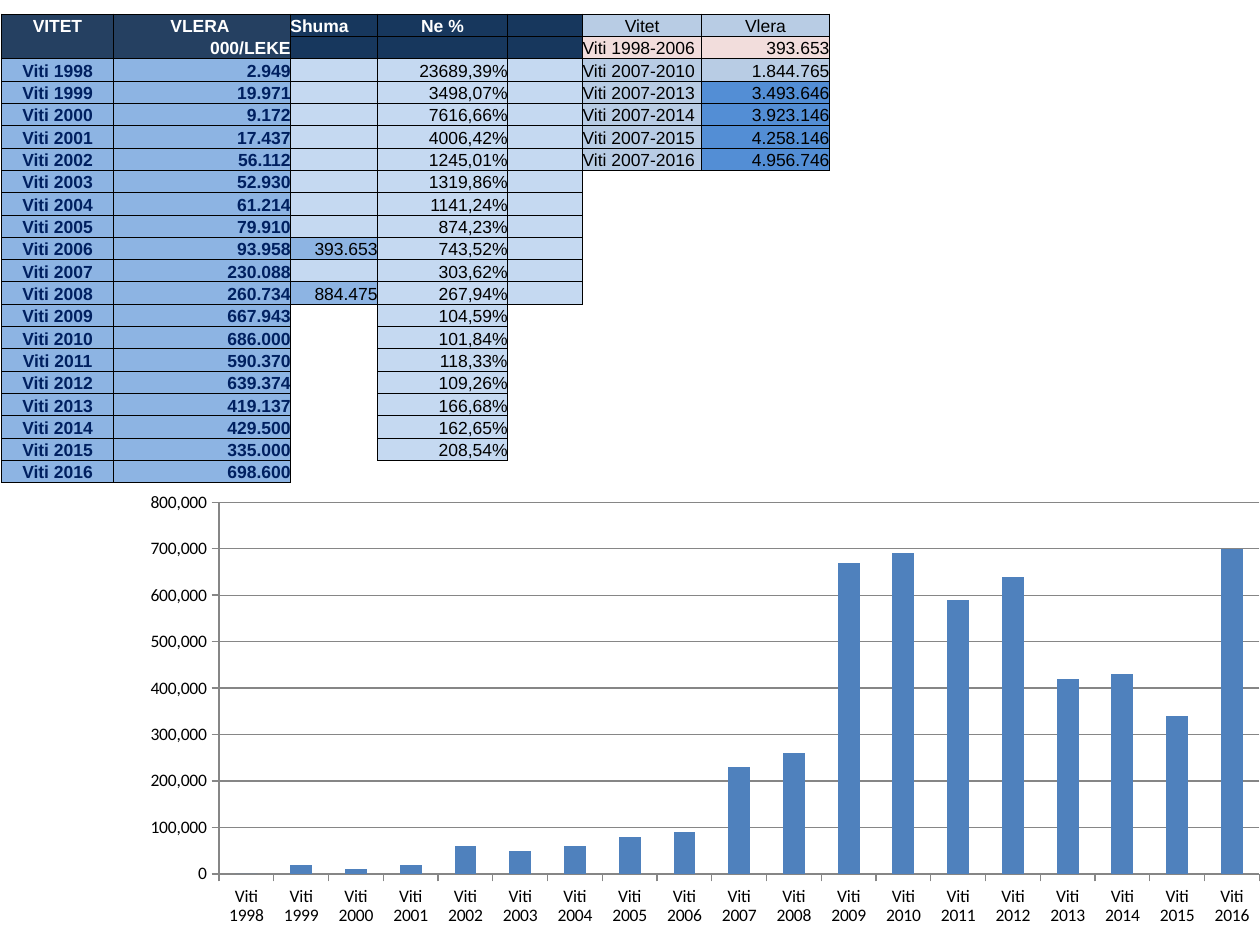
from lxml import etree
from pptx import Presentation
from pptx.chart.data import CategoryChartData
from pptx.dml.color import RGBColor
from pptx.enum import chart as ch, text
from pptx.oxml.ns import qn
from pptx.util import Pt

COLORS = {
    "title": "254061", "subtitle": "17375D", "year": "8DB4E3", "light": "C5D9F1",
    "period": "B8CCE4", "pink": "F2DDDC", "strong": "538ED5", "navy": "002060",
    "white": "FFFFFF", "black": "000000", "bar": "4F81BD", "axis": "868686",
}

# Content: year, value, share in percent
YEARS = [
    (1998, 2949, "23689,39%"), (1999, 19971, "3498,07%"), (2000, 9172, "7616,66%"),
    (2001, 17437, "4006,42%"), (2002, 56112, "1245,01%"), (2003, 52930, "1319,86%"),
    (2004, 61214, "1141,24%"), (2005, 79910, "874,23%"), (2006, 93958, "743,52%"),
    (2007, 230088, "303,62%"), (2008, 260734, "267,94%"), (2009, 667943, "104,59%"),
    (2010, 686000, "101,84%"), (2011, 590370, "118,33%"), (2012, 639374, "109,26%"),
    (2013, 419137, "166,68%"), (2014, 429500, "162,65%"), (2015, 335000, "208,54%"),
    (2016, 698600, None),
]
SUMS = {2006: "393.653", 2008: "884.475"}
LAST_SUM_YEAR = 2008
HEADERS = [
    ["VITET", "VLERA ", "Shuma", "Ne %", "", "Vitet", "Vlera"],
    ["", "000/LEKE", "", "", "", "Viti 1998-2006", "393.653"],
]
PERIODS = [
    ("Viti 2007-2010", "1.844.765", "period"), ("Viti 2007-2013", "3.493.646", "strong"),
    ("Viti 2007-2014", "3.923.146", "strong"), ("Viti 2007-2015", "4.258.146", "strong"),
    ("Viti 2007-2016", "4.956.746", "strong"),
]
COL_WIDTHS = [64.25, 101, 49.75, 74.25, 43, 68, 73]
ROW_HEIGHT = 12.77
LEFT, CENTER, RIGHT = text.PP_ALIGN.LEFT, text.PP_ALIGN.CENTER, text.PP_ALIGN.RIGHT
ALIGN = [CENTER, RIGHT, RIGHT, RIGHT, LEFT, LEFT, RIGHT]
HEAD_ALIGN = [CENTER, CENTER, LEFT, CENTER, LEFT, CENTER, CENTER]


def rgb(name):
    return RGBColor.from_string(COLORS[name])


def build_grid():
    """Rows of (text, fill name or None)."""
    head_fills = ["title"] * 2 + ["subtitle"] * 3
    grid = [list(zip(HEADERS[0], head_fills + ["period"] * 2)),
            list(zip(HEADERS[1], head_fills + ["pink"] * 2))]
    for i, (year, value, share) in enumerate(YEARS):
        light = "light" if year <= LAST_SUM_YEAR else None
        row = [(f"Viti {year}", "year"), (f"{value:,}".replace(",", "."), "year"),
               (SUMS.get(year, ""), "year" if year in SUMS else light),
               (share or "", "light" if share else None), ("", light)]
        if i < len(PERIODS):
            period, total, fill = PERIODS[i]
            row += [(period, "period"), (total, fill)]
        else:
            row += [("", None)] * 2
        grid.append(row)
    return grid


def has_edge(grid, r, c, dr, dc):
    """An edge shows beside any filled cell, but not inside the two-row headings."""
    r2, c2 = r + dr, c + dc
    if c < 2 and dr and {r, r2} == {0, 1}:
        return False
    inside = 0 <= r2 < len(grid) and 0 <= c2 < len(grid[0])
    return bool(grid[r][c][1] or (inside and grid[r2][c2][1]))


def set_borders(cell, grid, r, c):
    sides = [("lnL", 0, -1), ("lnR", 0, 1), ("lnT", -1, 0), ("lnB", 1, 0)]
    tc_pr = cell._tc.get_or_add_tcPr()
    for i, (tag, dr, dc) in enumerate(sides):
        ln = etree.Element(qn(f"a:{tag}"), w=str(Pt(0.5)))
        if has_edge(grid, r, c, dr, dc):
            fill = etree.SubElement(ln, qn("a:solidFill"))
            etree.SubElement(fill, qn("a:srgbClr"), val=COLORS["black"])
        else:
            etree.SubElement(ln, qn("a:noFill"))
        tc_pr.insert(i, ln)


def format_cell(cell, value, fill, r, c):
    cell.margin_left = cell.margin_right = cell.margin_top = cell.margin_bottom = 0
    cell.vertical_anchor = text.MSO_ANCHOR.BOTTOM
    if fill:
        cell.fill.solid()
        cell.fill.fore_color.rgb = rgb(fill)
    else:
        cell.fill.background()
    p = cell.text_frame.paragraphs[0]
    if not value:
        # Keeps an empty cell from stretching its row
        etree.SubElement(p._p, qn("a:endParaRPr"), sz="1000")
        return
    p.text = value
    p.alignment = HEAD_ALIGN[c] if r == 0 else ALIGN[c]
    font = p.runs[0].font
    font.name, font.size = "Arial", Pt(10)
    font.bold = c < 2 or (r == 0 and c < 5)
    if r < 2 and c < 5:
        font.color.rgb = rgb("white")
    else:
        font.color.rgb = rgb("navy" if c < 2 else "black")


def add_values_table(s):
    grid = build_grid()
    table = s.shapes.add_table(len(grid), len(COL_WIDTHS), Pt(0.75), Pt(8),
                               Pt(sum(COL_WIDTHS)), Pt(ROW_HEIGHT * len(grid))).table
    table.first_row = table.horz_banding = False
    for column, width in zip(table.columns, COL_WIDTHS):
        column.width = Pt(width)
    for r, row in enumerate(grid):
        table.rows[r].height = Pt(ROW_HEIGHT)
        for c, (value, fill) in enumerate(row):
            cell = table.cell(r, c)
            format_cell(cell, value, fill, r, c)
            set_borders(cell, grid, r, c)


def set_plot_layout(chart, **place):
    area = chart._chartSpace.find(".//" + qn("c:plotArea"))
    for old in area.findall(qn("c:layout")):
        area.remove(old)
    layout = etree.Element(qn("c:layout"))
    manual = etree.SubElement(layout, qn("c:manualLayout"))
    settings = {"layoutTarget": "inner", "xMode": "edge", "yMode": "edge", **place}
    for tag, value in settings.items():
        etree.SubElement(manual, qn(f"c:{tag}"), val=str(value))
    area.insert(0, layout)


def add_values_chart(s):
    data = CategoryChartData(number_format="#,##0")
    data.categories = [f"Viti {year}" for year, _, _ in YEARS]
    data.add_series("Series 1", [round(value, -4) for _, value, _ in YEARS])
    chart = s.shapes.add_chart(ch.XL_CHART_TYPE.COLUMN_STACKED, Pt(0), Pt(276.5),
                               Pt(720), Pt(263.5), data).chart
    chart.has_legend = chart.has_title = False
    chart.font.name, chart.font.size = "Calibri", Pt(10)
    chart.font.color.rgb = rgb("black")
    plot = chart.plots[0]
    plot.vary_by_categories = False
    plot.gap_width, plot.overlap = 150, 100
    fill = plot.series[0].format.fill
    fill.solid()
    fill.fore_color.rgb = rgb("bar")

    # Axes
    values = chart.value_axis
    values.minimum_scale, values.maximum_scale, values.major_unit = 0, 800000, 100000
    values.has_major_gridlines = True
    values.tick_labels.number_format = "#,##0"
    values.tick_labels.number_format_is_linked = False
    for axis in (chart.category_axis, values):
        axis.major_tick_mark = ch.XL_TICK_MARK.OUTSIDE
        axis.minor_tick_mark = ch.XL_TICK_MARK.NONE
    for part in (chart.category_axis, values, values.major_gridlines):
        part.format.line.color.rgb = rgb("axis")
        part.format.line.width = Pt(0.75)
    set_plot_layout(chart, x=0.174, y=0.04, w=0.826, h=0.806)


def main():
    prs = Presentation()
    prs.slide_width, prs.slide_height = Pt(720), Pt(540)
    s = prs.slides.add_slide(prs.slide_layouts[6])
    add_values_table(s)
    add_values_chart(s)
    prs.save("out.pptx")


if __name__ == "__main__":
    main()
